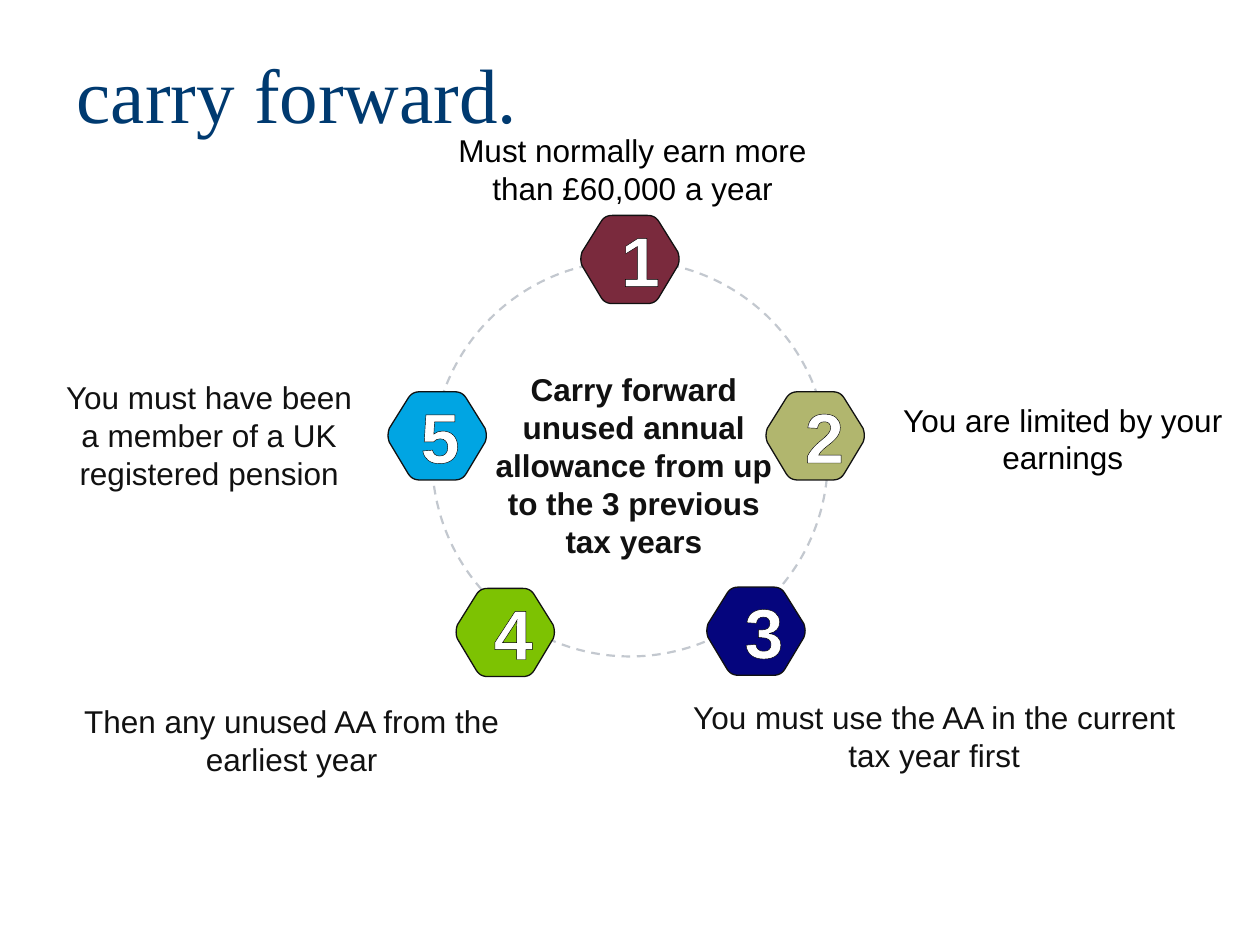
from lxml import etree
from pptx import Presentation
from pptx.dml.color import RGBColor
from pptx.enum import dml, shapes, text
from pptx.oxml.ns import qn
from pptx.util import Inches, Pt

BLACK = RGBColor(0x00, 0x00, 0x00)
INK = RGBColor(0x11, 0x11, 0x11)
WHITE = RGBColor(0xFF, 0xFF, 0xFF)
NAVY = RGBColor(0x00, 0x3A, 0x70)
RING_GREY = RGBColor(0xC3, 0xC8, 0xCF)
MAROON = RGBColor(0x7A, 0x2A, 0x3D)
OLIVE = RGBColor(0xB1, 0xB6, 0x6E)
DEEP_BLUE = RGBColor(0x05, 0x05, 0x7D)
GREEN = RGBColor(0x7D, 0xC2, 0x02)
SKY = RGBColor(0x00, 0xA5, 0xE3)

HEX_W, HEX_H = 0.78, 0.7
CORNER_STEPS = 6

# number, colour, badge left and top, digit offset, wording, its box, its colour
STEPS = [
    ("1", MAROON, (4.61, 1.71), 0.22, "Must normally earn more than £60,000 a year",
     (3.37, 0.99, 3.3, 0.71), BLACK),
    ("2", OLIVE, (6.08, 3.11), 0.21, "You are limited by your earnings",
     (6.92, 3.13, 3.03, 0.71), BLACK),
    ("3", DEEP_BLUE, (5.61, 4.66), 0.2, "You must use the AA in the current tax year first",
     (5.25, 5.49, 4.33, 0.71), INK),
    ("4", GREEN, (3.62, 4.67), 0.2, "Then any unused AA from the earliest year",
     (0.27, 5.52, 4.09, 0.71), INK),
    ("5", SKY, (3.08, 3.11), 0.16, "You must have been a member of a UK registered pension",
     (0.33, 2.95, 2.66, 1.01), INK),
]


def write(frame, words, size=18, color=INK, bold=False, font="Arial",
          align=text.PP_ALIGN.CENTER, anchor=text.MSO_ANCHOR.TOP):
    frame.word_wrap = True
    frame.vertical_anchor = anchor
    paragraph = frame.paragraphs[0]
    paragraph.alignment = align
    run = paragraph.add_run()
    run.text = words
    run.font.size, run.font.name, run.font.bold = Pt(size), font, bold
    run.font.color.rgb = color
    return run


def add_label(container, box, words, **style):
    label = container.add_textbox(*map(Inches, box))
    run = write(label.text_frame, words, **style)
    label.text_frame.auto_size = text.MSO_AUTO_SIZE.SHAPE_TO_FIT_TEXT
    return run


def add_title(slide, box, words):
    title = slide.shapes.title
    title.left, title.top, title.width, title.height = map(Inches, box)
    write(title.text_frame, words, size=44, color=NAVY, font="Times New Roman",
          align=text.PP_ALIGN.LEFT, anchor=text.MSO_ANCHOR.MIDDLE)


def add_ring(slide, box):
    ring = slide.shapes.add_shape(shapes.MSO_SHAPE.OVAL, *map(Inches, box))
    ring.shadow.inherit = False
    ring.fill.background()
    ring.line.color.rgb = RING_GREY
    ring.line.width = Pt(1.25)
    ring.line.dash_style = dml.MSO_LINE.DASH


def hexagon_outline():
    """Points of a hexagon with rounded corners, clockwise from its left tip."""
    left = [((0.01, 0.4), (-0.01, 0.35), (0.01, 0.29)),
            ((0.16, 0.05), (0.19, 0), (0.25, 0))]
    right = [tuple((HEX_W - x, y) for x, y in reversed(corner))
             for corner in reversed(left)]
    top = left + right
    bottom = [tuple((HEX_W - x, HEX_H - y) for x, y in corner)
              for corner in (top[2], top[1])]
    corners = top + [tuple((HEX_W - x, HEX_H - y) for x, y in top[1]),
                     tuple((HEX_W - x, HEX_H - y) for x, y in top[2])]
    assert len(bottom) == 2
    points = []
    for start, control, end in corners:
        for step in range(CORNER_STEPS + 1):
            t = step / CORNER_STEPS
            points.append(tuple((1 - t) ** 2 * a + 2 * t * (1 - t) * b + t * t * c
                                for a, b, c in zip(start, control, end)))
    return points


def outline_digit(run):
    line = etree.Element(qn("a:ln"), w=str(Pt(0.75)))
    fill = etree.SubElement(line, qn("a:solidFill"))
    etree.SubElement(fill, qn("a:srgbClr"), val=str(BLACK))
    run.font._element.insert(0, line)


def add_badge(slide, corner, number, color, digit_offset):
    left, top = corner
    badge = slide.shapes.add_group_shape().shapes
    points = [(Inches(left + x), Inches(top + y)) for x, y in hexagon_outline()]
    builder = badge.build_freeform(*points[0])
    builder.add_line_segments(points[1:], close=True)
    hexagon = builder.convert_to_shape()
    hexagon.shadow.inherit = False
    hexagon.fill.solid()
    hexagon.fill.fore_color.rgb = color
    hexagon.line.color.rgb = INK
    hexagon.line.width = Pt(0.75)
    digit = add_label(badge, (left + digit_offset, top - 0.04, 0.38, 0.77), number,
                      size=40, color=WHITE, bold=True)
    outline_digit(digit)


def main():
    deck = Presentation()
    deck.slide_width, deck.slide_height = Inches(10), Inches(7.5)
    slide = deck.slides.add_slide(deck.slide_layouts[5])
    add_title(slide, (0.51, 0.32, 9.31, 0.83), "carry forward.")
    add_ring(slide, (3.43, 2.07, 3.14, 3.14))
    for _, _, _, _, wording, box, color in STEPS:
        add_label(slide.shapes, box, wording, color=color)
    add_label(slide.shapes, (3.79, 2.89, 2.48, 1.62),
              "Carry forward unused annual allowance from up to the 3 previous tax years",
              bold=True)
    for number, color, corner, digit_offset, *_ in STEPS:
        add_badge(slide, corner, number, color, digit_offset)
    deck.save("out.pptx")


if __name__ == "__main__":
    main()
